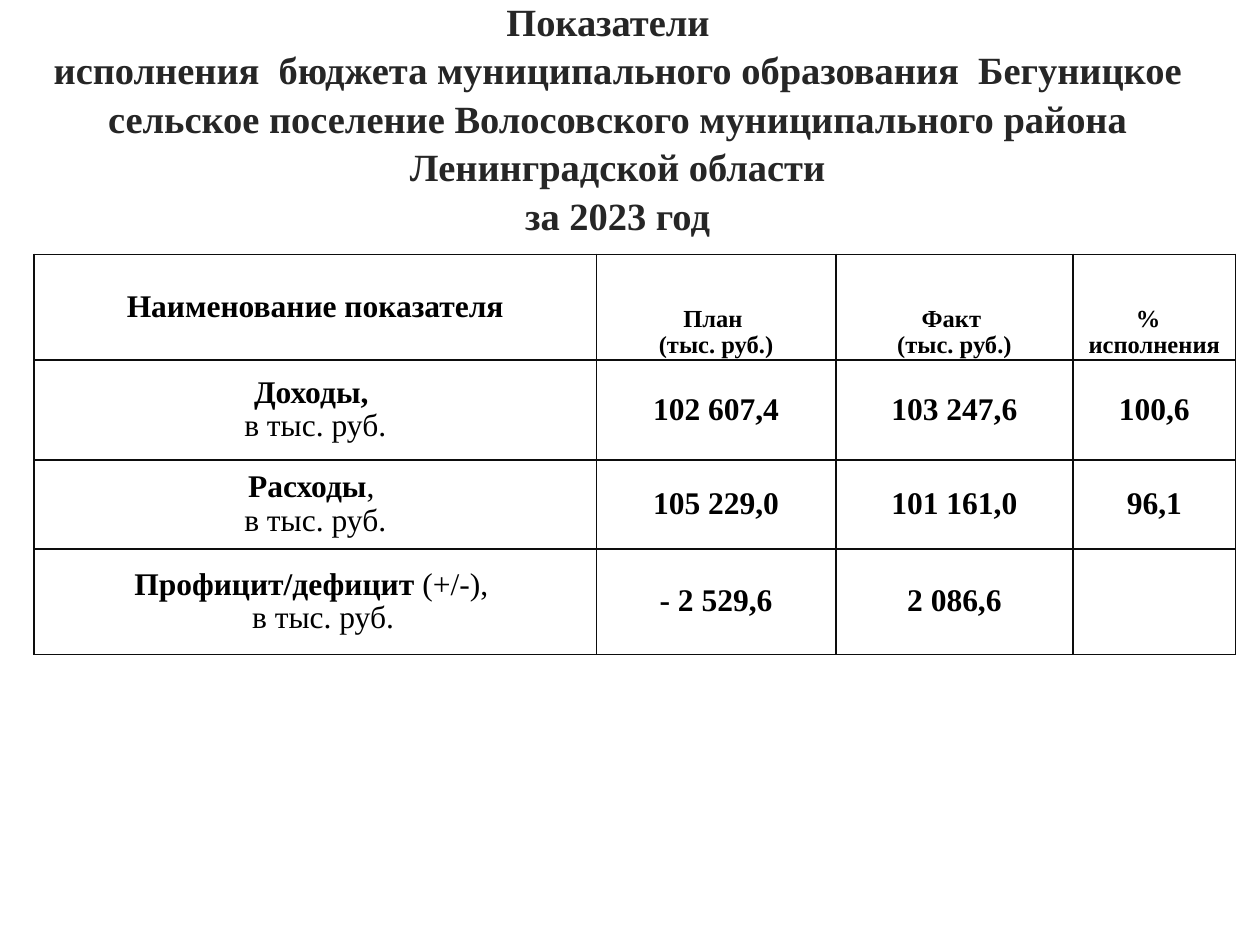
from lxml.etree import SubElement
from pptx import Presentation
from pptx.dml.color import RGBColor
from pptx.enum.text import MSO_ANCHOR, MSO_AUTO_SIZE, PP_ALIGN
from pptx.oxml.ns import qn
from pptx.util import Cm, Pt

COLORS = {"title": "262626", "text": "000000", "border": "0D0D0D", "cell": "FFFFFF"}
FONT = "Times New Roman"
TITLE_LINES = [
    "Показатели  ",
    "исполнения  бюджета муниципального образования  Бегуницкое "
    "сельское поселение Волосовского муниципального района Ленинградской области",
    "за 2023 год",
]
COLUMN_WIDTHS = [11.33, 4.83, 4.78, 3.28]
ROW_HEIGHTS = [1.04, 1.09, 2.01, 1.8, 2.13]
UNIT = [("в тыс. руб.", False)]
HEADINGS = [("План ", "(тыс. руб.)"), ("Факт ", "(тыс. руб.)"), ("%  ", "исполнения")]
INDICATORS = [
    ([[("Доходы, ", True)], UNIT], ["102 607,4", "103 247,6", "100,6"]),
    ([[("Расходы", True), (", ", False)], UNIT], ["105 229,0", "101 161,0", "96,1"]),
    ([[("Профицит/дефицит ", True), ("(+/-), ", False)], [("  в тыс. руб.", False)]],
     ["- 2 529,6", "2 086,6", ""]),
]


def add_span(para, text, size, color, bold=True):
    """Add one formatted run to a paragraph."""
    span = para.add_run()
    span.text = text
    span.font.name = FONT
    span.font.size = Pt(size)
    span.font.bold = bold
    span.font.color.rgb = RGBColor.from_string(COLORS[color])


def place_title(page, left, top, width, height):
    """Fill the title placeholder with the centred heading."""
    box = page.shapes.title
    box.left, box.top, box.width, box.height = map(Cm, (left, top, width, height))
    frame = box.text_frame
    frame.word_wrap = True
    frame.auto_size = MSO_AUTO_SIZE.NONE
    frame.vertical_anchor = MSO_ANCHOR.BOTTOM
    para = frame.paragraphs[0]
    para.alignment = PP_ALIGN.CENTER
    para.line_spacing = 1.05
    for index, line in enumerate(TITLE_LINES):
        if index:
            para.add_line_break()
        add_span(para, line, 22, "title")


def write_cell(cell, lines, size=18):
    """Write centred lines, each a list of (text, bold) pairs, into a cell."""
    frame = cell.text_frame
    for index, line in enumerate(lines):
        para = frame.add_paragraph() if index else frame.paragraphs[0]
        para.alignment = PP_ALIGN.CENTER
        para.line_spacing = 0.96
        for text, bold in line:
            add_span(para, text, size, "text", bold)


def style_cell(cell, open_sides):
    """Give a cell its fill, margins and borders, leaving some sides open."""
    cell.margin_left = cell.margin_right = cell.margin_top = cell.margin_bottom = 0
    cell.vertical_anchor = MSO_ANCHOR.MIDDLE
    properties = cell._tc.get_or_add_tcPr()
    for side in "LRTB":
        line = SubElement(properties, qn(f"a:ln{side}"), w=str(Pt(1)))
        if side in open_sides:
            SubElement(line, qn("a:noFill"))
        else:
            fill = SubElement(line, qn("a:solidFill"))
            SubElement(fill, qn("a:srgbClr"), val=COLORS["border"])
    cell.fill.solid()
    cell.fill.fore_color.rgb = RGBColor.from_string(COLORS["cell"])


def place_table(page, left, top):
    """Build the table of budget indicators."""
    box = page.shapes.add_table(
        len(ROW_HEIGHTS), len(COLUMN_WIDTHS), Cm(left), Cm(top),
        Cm(sum(COLUMN_WIDTHS)), Cm(sum(ROW_HEIGHTS)))
    table = box.table
    for column, width in zip(table.columns, COLUMN_WIDTHS):
        column.width = Cm(width)
    for row, height in zip(table.rows, ROW_HEIGHTS):
        row.height = Cm(height)
    for number, row in enumerate(table.rows):
        for cell in row.cells:
            style_cell(cell, {0: "B", 1: "T"}.get(number, ""))
    table.cell(0, 0).merge(table.cell(1, 0))
    write_cell(table.cell(0, 0), [[("Наименование показателя", True)]])
    for column, heading in enumerate(HEADINGS, 1):
        write_cell(table.cell(1, column), [[(line, True)] for line in heading], 14)
    for row, (name, values) in enumerate(INDICATORS, 2):
        write_cell(table.cell(row, 0), name)
        for column, value in enumerate(values, 1):
            if value:
                write_cell(table.cell(row, column), [[(value, True)]])


def main():
    """Create the deck and save it."""
    deck = Presentation()
    deck.slide_width, deck.slide_height = Cm(25.4), Cm(19.05)
    page = deck.slides.add_slide(deck.slide_layouts[5])
    place_title(page, 0.79, 0.53, 23.32, 4.39)
    place_table(page, 0.69, 5.13)
    deck.save("out.pptx")


if __name__ == "__main__":
    main()
